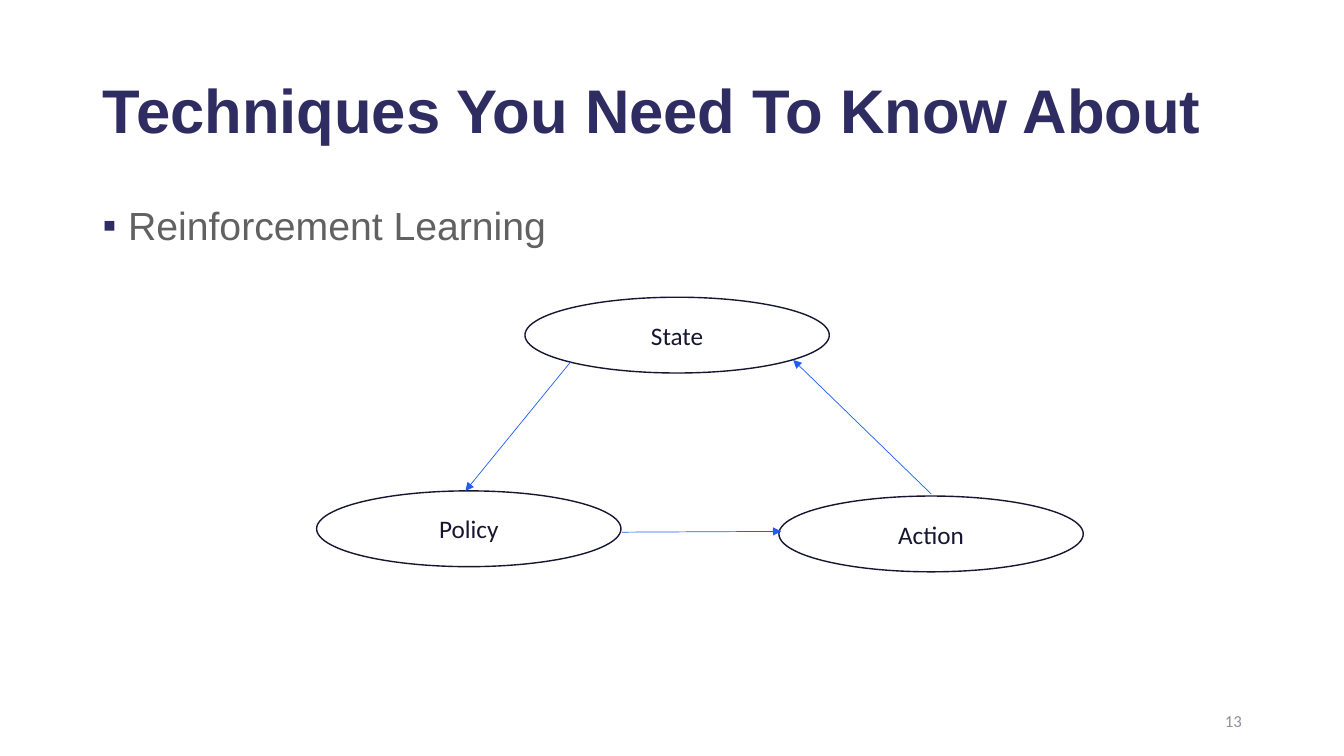
from lxml.etree import SubElement
from pptx import Presentation
from pptx.dml.color import RGBColor
from pptx.enum.shapes import MSO_CONNECTOR, MSO_SHAPE
from pptx.enum.text import MSO_ANCHOR, PP_ALIGN
from pptx.oxml.ns import qn
from pptx.util import Cm, Pt


def rgb(color):
    return RGBColor.from_string(color)


def write(tf, text, font="Calibri", size=18, color="171630", bold=False,
          align=PP_ALIGN.LEFT, anchor=MSO_ANCHOR.MIDDLE, spacing=1.0, bullet=None):
    tf.word_wrap = True
    tf.vertical_anchor = anchor
    p = tf.paragraphs[0]
    p.alignment = align
    p.line_spacing = spacing
    if bullet:
        pPr = p._p.get_or_add_pPr()
        pPr.set("marL", str(Cm(0.64)))
        pPr.set("indent", str(-Cm(0.64)))
        clr = SubElement(pPr, qn("a:buClr"))
        SubElement(clr, qn("a:srgbClr"), val=bullet)
        SubElement(pPr, qn("a:buFont"), typeface="Arial")
        SubElement(pPr, qn("a:buChar"), char="▪")
    r = p.add_run()
    r.text = text
    r.font.name = font
    r.font.size = Pt(size)
    r.font.bold = bold
    r.font.color.rgb = rgb(color)


class Deck:
    NAVY, GREY, PALE = "2E2C61", "616161", "8F8F9E"
    OUTLINE, ARROW = "171631", "1E5DF8"
    NODE_W, NODE_H = 7.67, 1.91

    def __init__(self, prs):
        self.s = prs.slides.add_slide(prs.slide_layouts[5])

    def title(self, text, x, y, w, h):
        sp = self.s.shapes.title
        sp.left, sp.top, sp.width, sp.height = Cm(x), Cm(y), Cm(w), Cm(h)
        write(sp.text_frame, text, font="Arial", size=44, color=self.NAVY,
              bold=True, spacing=0.9)

    def text(self, text, x, y, w, h, **fmt):
        sp = self.s.shapes.add_textbox(Cm(x), Cm(y), Cm(w), Cm(h))
        write(sp.text_frame, text, **fmt)

    def node(self, text, x, y):
        sp = self.s.shapes.add_shape(MSO_SHAPE.OVAL, Cm(x), Cm(y),
                                     Cm(self.NODE_W), Cm(self.NODE_H))
        sp.shadow.inherit = False
        sp.fill.solid()
        sp.fill.fore_color.rgb = rgb("FFFFFF")
        sp.line.color.rgb = rgb(self.OUTLINE)
        sp.line.width = Pt(1)
        write(sp.text_frame, text, align=PP_ALIGN.CENTER)

    def arrow(self, x1, y1, x2, y2):
        cn = self.s.shapes.add_connector(MSO_CONNECTOR.STRAIGHT,
                                         Cm(x1), Cm(y1), Cm(x2), Cm(y2))
        cn.line.color.rgb = rgb(self.ARROW)
        cn.line.width = Pt(0.5)
        SubElement(cn.line._get_or_add_ln(), qn("a:tailEnd"), type="triangle")
        SubElement(cn._element.spPr, qn("a:effectLst"))


def main():
    prs = Presentation()
    prs.slide_width, prs.slide_height = Cm(33.87), Cm(19.05)
    deck = Deck(prs)

    # Heading, bullet and page number
    deck.title("Techniques You Need To Know About", 2.34, 1.02, 29.21, 3.68)
    deck.text("Reinforcement Learning", 2.34, 5.08, 29.21, 12.09, font="Arial",
              size=28, color=deck.GREY, spacing=0.9, anchor=MSO_ANCHOR.TOP,
              bullet=deck.NAVY)
    deck.text("13", 23.93, 17.65, 7.62, 1.02, size=12, color=deck.PALE,
              align=PP_ALIGN.RIGHT)

    # Learning cycle: nodes
    for name, x, y in [("State", 13.23, 7.49), ("Policy", 7.98, 12.37),
                       ("Action", 19.63, 12.5)]:
        deck.node(name, x, y)

    # Learning cycle: state to policy, policy to action, action to state
    for ends in [(14.38, 9.12, 11.73, 12.37), (15.67, 13.41, 19.69, 13.39),
                 (23.47, 12.45, 19.99, 9.07)]:
        deck.arrow(*ends)

    prs.save("out.pptx")


if __name__ == "__main__":
    main()
